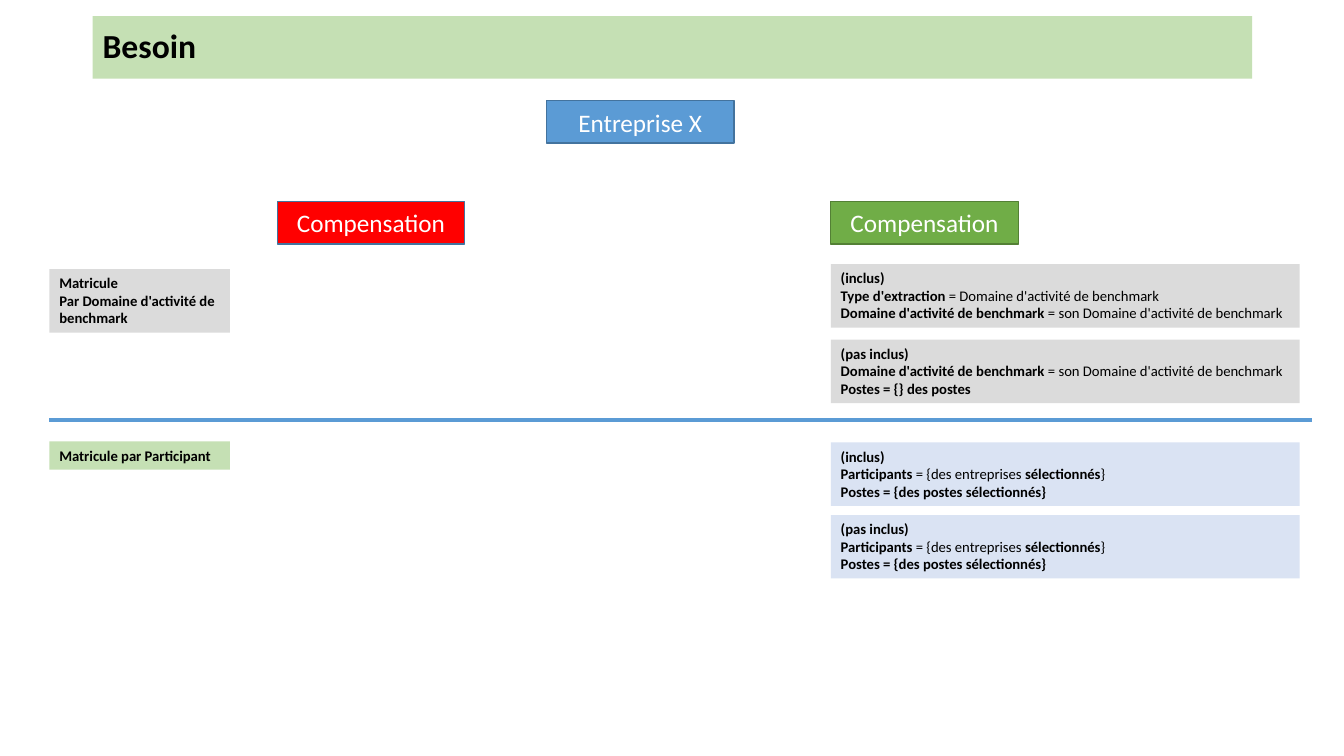
from dataclasses import dataclass

from lxml import etree
from pptx import Presentation
from pptx.dml.color import RGBColor
from pptx.enum.shapes import MSO_CONNECTOR, MSO_SHAPE
from pptx.enum.text import MSO_ANCHOR, MSO_AUTO_SIZE, PP_ALIGN
from pptx.oxml.ns import qn
from pptx.util import Inches, Pt

RECT = MSO_SHAPE.RECTANGLE
STRAIGHT = MSO_CONNECTOR.STRAIGHT
TOP, MIDDLE = MSO_ANCHOR.TOP, MSO_ANCHOR.MIDDLE
LEFT, CENTER = PP_ALIGN.LEFT, PP_ALIGN.CENTER
GROW = MSO_AUTO_SIZE.SHAPE_TO_FIT_TEXT


@dataclass(frozen=True)
class Theme:
    font: str = "Calibri"
    title_size: float = 24
    head_size: float = 18
    note_size: float = 10.5
    black: str = "000000"
    white: str = "FFFFFF"
    blue: str = "5B9BD5"
    blue_edge: str = "43739E"
    red: str = "FF0000"
    green: str = "70AD47"
    green_edge: str = "538035"
    pale_green: str = "C5E0B4"
    gray: str = "DBDBDB"
    pale_blue: str = "DAE3F3"


T = Theme()

LABEL_X, LABEL_W = 0.49, 1.79
HEAD_W, HEAD_H = 1.86, 0.42
RULE_X = 8.24
RULE_W, RULE_H = 4.65, 0.63

# In the rule texts, "|" switches between bold and regular
PARTICIPANTS = "Participants |= {des entreprises| sélectionnés|}"
POSTES = "Postes = {des postes sélectionnés}"
DOMAINE = "Domaine d'activité de benchmark |= son Domaine d'activité de benchmark"


def add_box(s, box, fill, edge=None):
    sp = s.shapes.add_shape(RECT, *map(Inches, box))
    sp.shadow.inherit = False
    sp.fill.solid()
    sp.fill.fore_color.rgb = RGBColor.from_string(fill)
    if edge:
        sp.line.color.rgb = RGBColor.from_string(edge)
        sp.line.width = Pt(1)
    else:
        sp.line.fill.background()
    return sp


def format_run(r, size, color, bold):
    r.font.name = T.font
    r.font.size = Pt(size)
    r.font.bold = bold
    r.font.color.rgb = RGBColor.from_string(color)


def add_title(s, box, text):
    tf = add_box(s, box, T.pale_green).text_frame
    tf.text = text
    tf.vertical_anchor = MIDDLE
    p = tf.paragraphs[0]
    p.alignment = LEFT
    p.line_spacing = 0.9
    format_run(p.runs[0], T.title_size, T.black, True)


def add_head(s, x, y, text, fill, edge):
    tf = add_box(s, (x, y, HEAD_W, HEAD_H), fill, edge).text_frame
    tf.text = text
    tf.vertical_anchor = MIDDLE
    p = tf.paragraphs[0]
    p.alignment = CENTER
    format_run(p.runs[0], T.head_size, T.white, False)


def add_note(s, box, fill, lines):
    tf = add_box(s, box, fill).text_frame
    tf.word_wrap = True
    tf.auto_size = GROW
    tf.vertical_anchor = TOP
    for i, line in enumerate(lines):
        p = tf.add_paragraph() if i else tf.paragraphs[0]
        p.alignment = LEFT
        for j, part in enumerate(line.split("|")):
            r = p.add_run()
            r.text = part
            format_run(r, T.note_size, T.black, j % 2 == 0)


def add_divider(s, x1, x2, y):
    line = s.shapes.add_connector(
        STRAIGHT, Inches(x1), Inches(y), Inches(x2), Inches(y))
    line.line.color.rgb = RGBColor.from_string(T.blue)
    line.line.width = Pt(3)
    etree.SubElement(line._element.spPr, qn("a:effectLst"))


def add_section(s, label_box, label_fill, label, rule_fill, rules):
    """Matricule label on the left, its rule boxes on the right."""
    add_note(s, label_box, label_fill, label)
    for y, lines in rules:
        add_note(s, (RULE_X, y, RULE_W, RULE_H), rule_fill, lines)


def main():
    prs = Presentation()
    prs.slide_width, prs.slide_height = Inches(13.33), Inches(7.5)
    s = prs.slides.add_slide(prs.slide_layouts[6])

    # Title and column heads
    add_title(s, (0.92, 0.16, 11.5, 0.62), "Besoin")
    add_head(s, 5.42, 1, "Entreprise X", T.blue, T.blue_edge)
    add_head(s, 2.75, 2, "Compensation", T.red, T.blue_edge)
    add_head(s, RULE_X, 2, "Compensation", T.green, T.green_edge)

    # By benchmark domain
    add_section(
        s, (LABEL_X, 2.67, LABEL_W, 0.63), T.gray,
        ["Matricule", "Par Domaine d'activité de benchmark"], T.gray,
        [(2.62, ["(inclus)",
                 "Type d'extraction |= Domaine d'activité de benchmark",
                 DOMAINE]),
         (3.37, ["(pas inclus)", DOMAINE, "Postes = {} des postes"])])

    add_divider(s, LABEL_X, 13.01, 4.17)

    # By participant
    add_section(
        s, (LABEL_X, 4.38, LABEL_W, 0.28), T.pale_green,
        ["Matricule par Participant"], T.pale_blue,
        [(4.39, ["(inclus)", PARTICIPANTS, POSTES]),
         (5.11, ["(pas inclus)", PARTICIPANTS, POSTES])])

    prs.save("out.pptx")


if __name__ == "__main__":
    main()
